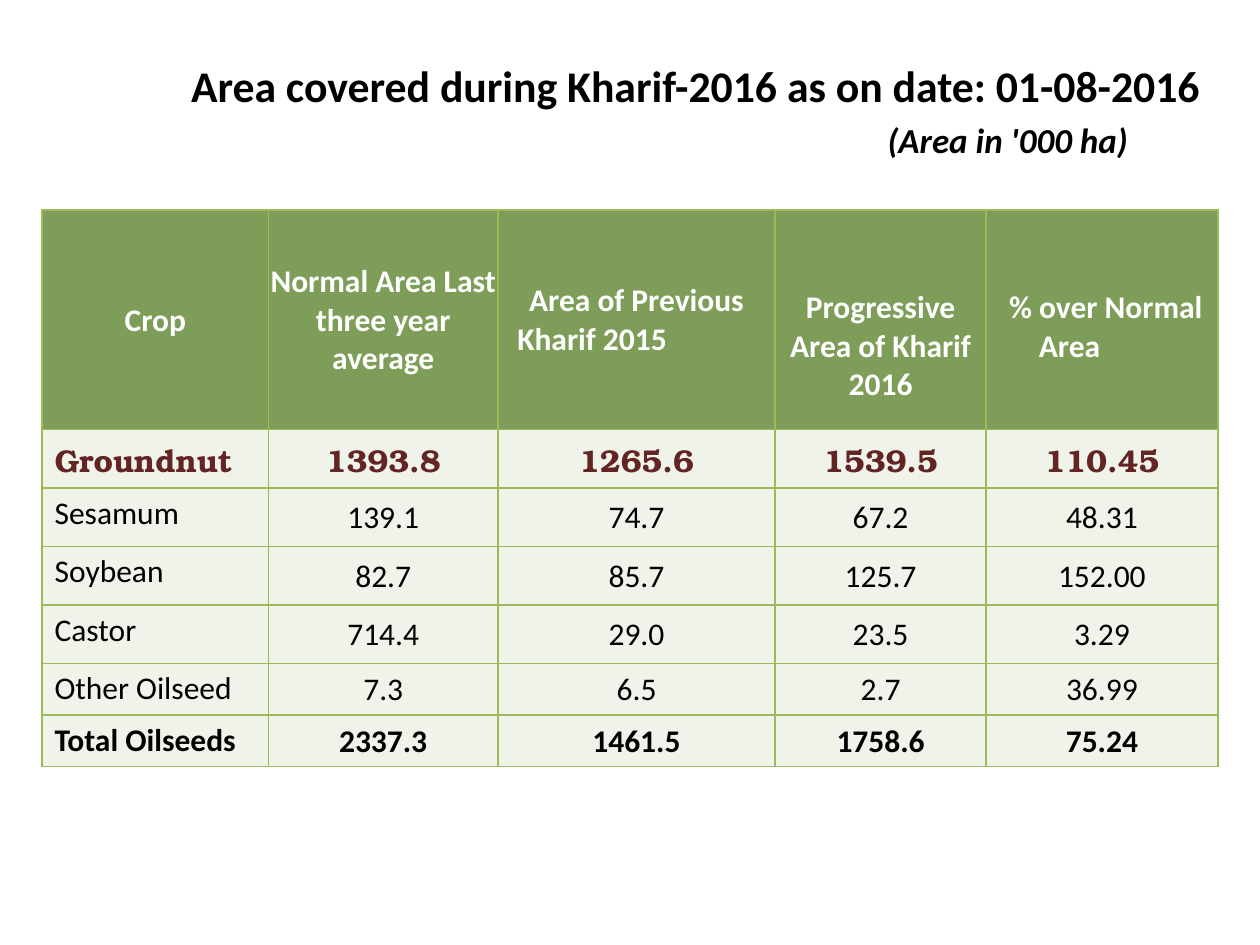
from dataclasses import dataclass

from lxml import etree
from pptx import Presentation
from pptx.dml.color import RGBColor
from pptx.enum import text
from pptx.oxml import ns
from pptx.util import Pt


@dataclass(frozen=True)
class Theme:
    font: str = "Calibri"
    accent_font: str = "TeX Gyre Bonum"
    ink: str = "000000"
    accent: str = "632523"
    header_ink: str = "FFFFFF"
    header_fill: str = "7E9D59"
    body_fill: str = "EFF3EA"
    border: str = "9BBB59"
    title_size: float = 25
    unit_size: float = 20
    table_size: float = 18


THEME = Theme()
ALIGN = text.PP_ALIGN
ANCHOR = text.MSO_ANCHOR

COL_WIDTHS = [129.5, 131, 158.5, 120.5, 132.5]
ROW_HEIGHTS = [125.5] + [33.4] * 4 + [29.5] * 2
TIGHT = (0.7, 0.7, 0.7, 0)
ROOMY = (7.2, 3.6, 7.2, 3.6)
LOWERED = (0.7, 45, 0.7, 0)

# fmt: off
HEADERS = [
    (TIGHT, ANCHOR.MIDDLE, [("Crop", None)]),
    (TIGHT, ANCHOR.MIDDLE, [("Normal Area Last three year average", None)]),
    (TIGHT, ANCHOR.MIDDLE, [("Area of Previous", None), ("Kharif 2015", (10.5, 0))]),
    (LOWERED, ANCHOR.TOP, [("Progressive Area of Kharif 2016", None)]),
    (LOWERED, ANCHOR.TOP, [("% over Normal Area", (29.5, -17))]),
]
CROPS = [
    ("Groundnut", "1393.8", "1265.6", "1539.5", "110.45"),
    ("Sesamum", "139.1", "74.7", "67.2", "48.31"),
    ("Soybean", "82.7", "85.7", "125.7", "152.00"),
    ("Castor", "714.4", "29.0", "23.5", "3.29"),
    ("Other Oilseed", "7.3", "6.5", "2.7", "36.99"),
    ("Total Oilseeds", "2337.3", "1461.5", "1758.6", "75.24"),
]
# fmt: on


def add_run(p, wording, size, color, bold=False, italic=False, font=THEME.font):
    r = p.add_run()
    r.text = wording
    r.font.name = font
    r.font.size = Pt(size)
    r.font.bold = bold
    r.font.italic = italic
    r.font.color.rgb = RGBColor.from_string(color)


def indent(p, left, first):
    pPr = p._p.get_or_add_pPr()
    pPr.set("marL", str(Pt(left)))
    pPr.set("indent", str(Pt(first)))


def set_borders(cell):
    tcPr = cell._tc.get_or_add_tcPr()
    for side in ("lnL", "lnR", "lnT", "lnB"):
        ln = etree.SubElement(tcPr, ns.qn(f"a:{side}"), w=str(Pt(1)))
        fill = etree.SubElement(ln, ns.qn("a:solidFill"))
        etree.SubElement(fill, ns.qn("a:srgbClr"), val=THEME.border)


def format_cell(cell, fill, margins, anchor):
    set_borders(cell)
    cell.fill.solid()
    cell.fill.fore_color.rgb = RGBColor.from_string(fill)
    cell.margin_left, cell.margin_top, cell.margin_right, cell.margin_bottom = map(Pt, margins)
    cell.vertical_anchor = anchor


def add_heading(s, left, top, width, height):
    sp = s.shapes.title
    sp.left, sp.top, sp.width, sp.height = map(Pt, (left, top, width, height))
    tf = sp.text_frame
    tf.word_wrap = True
    tf.auto_size = text.MSO_AUTO_SIZE.NONE
    tf.vertical_anchor = ANCHOR.TOP
    p = tf.paragraphs[0]
    p.alignment = ALIGN.LEFT
    add_run(p, "Area covered during Kharif-2016 as on date: 01-08-2016",
            THEME.title_size, THEME.ink, bold=True)
    p = tf.add_paragraph()
    p.alignment = ALIGN.LEFT
    p.space_before = Pt(4)
    indent(p, width - 196, 0)
    add_run(p, "(Area in '000 ha)", THEME.unit_size, THEME.ink, bold=True, italic=True)


def fill_header(cell, margins, anchor, lines):
    format_cell(cell, THEME.header_fill, margins, anchor)
    tf = cell.text_frame
    for i, (line, offsets) in enumerate(lines):
        p = tf.add_paragraph() if i else tf.paragraphs[0]
        p.alignment = ALIGN.LEFT if offsets else ALIGN.CENTER
        if offsets:
            indent(p, *offsets)
        add_run(p, line, THEME.table_size, THEME.header_ink, bold=True)


def fill_crop_row(cells, values, is_lead, is_total):
    font = THEME.accent_font if is_lead else THEME.font
    color = THEME.accent if is_lead else THEME.ink
    for col, (cell, value) in enumerate(zip(cells, values)):
        is_label = col == 0
        format_cell(cell, THEME.body_fill, ROOMY if is_label else TIGHT,
                    ANCHOR.TOP if is_label else ANCHOR.MIDDLE)
        p = cell.text_frame.paragraphs[0]
        p.alignment = ALIGN.JUSTIFY if is_label else ALIGN.CENTER
        add_run(p, value, THEME.table_size, color, bold=is_lead or is_total, font=font)


def add_crop_table(s, left, top):
    frame = s.shapes.add_table(
        len(ROW_HEIGHTS), len(COL_WIDTHS), Pt(left), Pt(top),
        Pt(sum(COL_WIDTHS)), Pt(sum(ROW_HEIGHTS)))
    table = frame.table
    table.horz_banding = False
    for column, width in zip(table.columns, COL_WIDTHS):
        column.width = Pt(width)
    for row, height in zip(table.rows, ROW_HEIGHTS):
        row.height = Pt(height)
    for cell, header in zip(table.rows[0].cells, HEADERS):
        fill_header(cell, *header)
    for i, values in enumerate(CROPS):
        fill_crop_row(table.rows[i + 1].cells, values, i == 0, i == len(CROPS) - 1)


def main():
    prs = Presentation()
    prs.slide_width, prs.slide_height = Pt(720), Pt(540)
    s = prs.slides.add_slide(prs.slide_layouts[5])
    add_heading(s, 102, 30, 594, 67)
    add_crop_table(s, 24, 120)
    prs.save("out.pptx")


if __name__ == "__main__":
    main()
